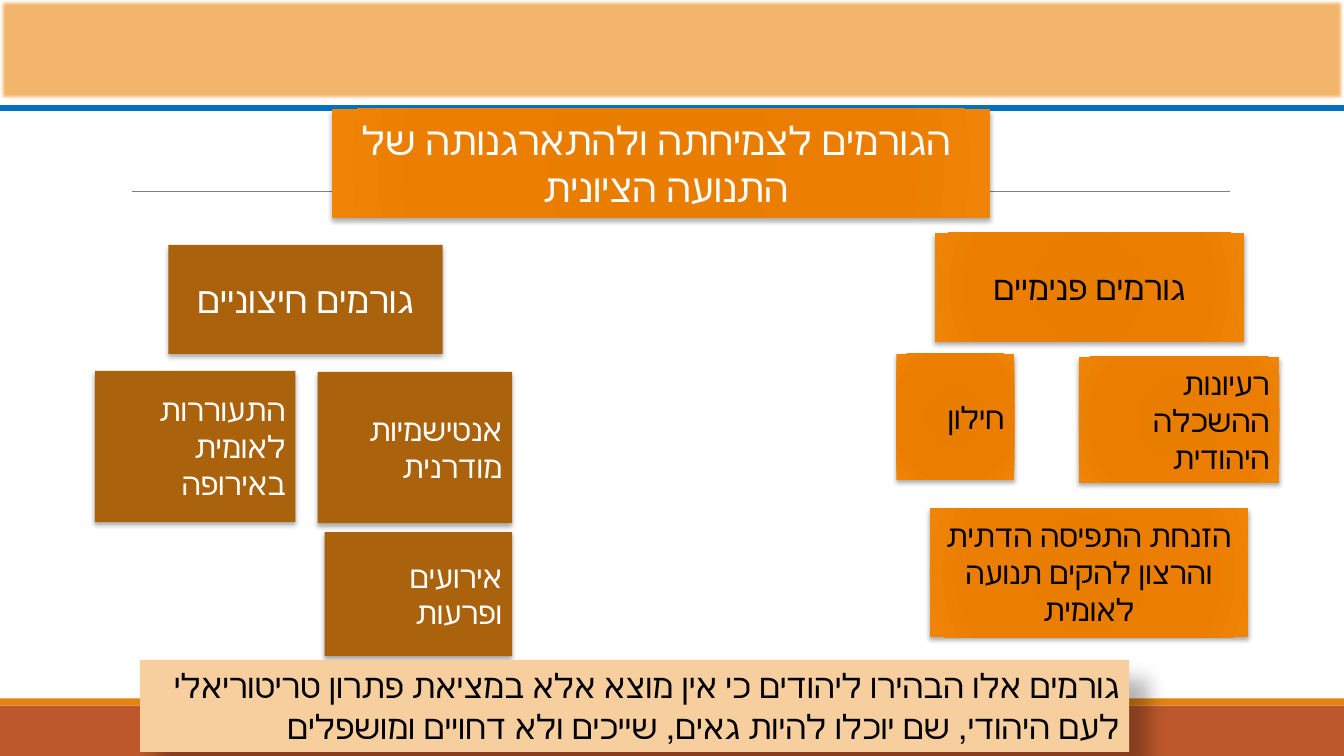
from dataclasses import dataclass
from typing import Optional

from lxml.etree import SubElement
from pptx import Presentation
from pptx.dml.color import RGBColor
from pptx.enum.shapes import MSO_CONNECTOR, MSO_SHAPE
from pptx.enum.text import MSO_ANCHOR, MSO_AUTO_SIZE, PP_ALIGN
from pptx.oxml import parse_xml
from pptx.oxml.ns import nsdecls, qn
from pptx.shapes.autoshape import Shape
from pptx.util import Emu, Pt

PX = 9144
POINT = 12700
BLACK, WHITE = "000000", "FFFFFF"
BROWN = "AB620D"
GLOW = ((0, "E57B00"), (34, "E87D00"), (70, "EB7E00"), (100, "EF8407"))


@dataclass(frozen=True)
class Shadow:
    alpha: int
    blur: float
    distance: float
    angle: int


CARD_SHADOW = Shadow(32, 3.5, 2.2, 90)
SUMMARY_SHADOW = Shadow(30, 15, 18, 45)


@dataclass(frozen=True)
class Band:
    top: int
    height: int
    color: str
    soft_edge: float = 0


@dataclass(frozen=True)
class Rule:
    left: int
    right: int
    y: int
    color: str
    weight: float


@dataclass(frozen=True)
class Card:
    text: str
    left: int
    top: int
    width: int
    height: int
    size: int = 22
    color: str = BLACK
    fill: Optional[str] = None
    align: PP_ALIGN = PP_ALIGN.RIGHT
    anchor: MSO_ANCHOR = MSO_ANCHOR.MIDDLE
    auto_size: MSO_AUTO_SIZE = MSO_AUTO_SIZE.NONE
    shadow: Shadow = CARD_SHADOW


BANDS = (
    Band(700, 50, "BD582C"),
    Band(693, 7, "E48312"),
    Band(0, 99, "F3B56C", 2.5),
)
RULES = (
    Rule(131, 1220, 190, "808080", 0.5),
    Rule(0, 1333, 107, "0070C0", 4.5),
)
INTERNAL_FACTORS = (
    Card("גורמים פנימיים", 927, 231, 307, 108, 24, align=PP_ALIGN.CENTER),
    Card("רעיונות ההשכלה היהודית", 1070, 354, 199, 125),
    Card("הזנחת התפיסה הדתית והרצון להקים תנועה לאומית",
         922, 504, 316, 128, align=PP_ALIGN.CENTER),
    Card("חילון", 889, 351, 117, 125),
)
EXTERNAL_FACTORS = (
    Card("גורמים חיצוניים", 167, 243, 272, 108, 26, WHITE, BROWN, PP_ALIGN.CENTER),
    Card("אנטישמיות מודרנית", 315, 369, 193, 150, 22, WHITE, BROWN),
    Card("התעוררות לאומית באירופה", 94, 368, 199, 150, 22, WHITE, BROWN),
    Card("אירועים ופרעות", 322, 528, 186, 123, 22, WHITE, BROWN),
)
SUMMARY = Card(
    "גורמים אלו הבהירו ליהודים כי אין מוצא אלא במציאת פתרון טריטוריאלי "
    "לעם היהודי, שם יוכלו להיות גאים, שייכים ולא דחויים ומושפלים",
    139, 655, 981, 91, 24, fill="F7CE9D", anchor=MSO_ANCHOR.TOP,
    auto_size=MSO_AUTO_SIZE.SHAPE_TO_FIT_TEXT, shadow=SUMMARY_SHADOW,
)
TITLE = Card(" הגורמים לצמיחתה ולהתארגנותה של התנועה הציונית ",
             329, 108, 653, 108, 28, WHITE, align=PP_ALIGN.CENTER)


def px(length: int) -> Emu:
    return Emu(length * PX)


def rgb(color: str) -> RGBColor:
    return RGBColor.from_string(color)


def apply_format(target: object, values: dict) -> None:
    for name, value in values.items():
        setattr(target, name, value)


def add_rectangle(shapes, left: int, top: int, width: int, height: int,
                  color: Optional[str]) -> Shape:
    rectangle = shapes.add_shape(
        MSO_SHAPE.RECTANGLE, px(left), px(top), px(width), px(height))
    rectangle.shadow.inherit = False
    rectangle.line.fill.background()
    if color:
        rectangle.fill.solid()
        rectangle.fill.fore_color.rgb = rgb(color)
    else:
        fill_with_glow(rectangle)
    return rectangle


def fill_with_glow(rectangle: Shape) -> None:
    rectangle.fill.background()
    properties = rectangle.element.spPr
    stops = "".join(
        f'<a:gs pos="{position * 1000}"><a:srgbClr val="{color}"/></a:gs>'
        for position, color in GLOW)
    edges = " ".join(f'{side}="100000"' for side in "ltrb")
    gradient = parse_xml(
        f'<a:gradFill {nsdecls("a")} rotWithShape="1"><a:gsLst>{stops}</a:gsLst>'
        f'<a:path path="circle"><a:fillToRect {edges}/></a:path></a:gradFill>')
    properties.replace(properties.find(qn("a:noFill")), gradient)


def add_shadow(rectangle: Shape, shadow: Shadow) -> None:
    effects = rectangle.element.spPr.find(qn("a:effectLst"))
    outer = SubElement(
        effects, qn("a:outerShdw"), blurRad=str(round(shadow.blur * POINT)),
        dist=str(round(shadow.distance * POINT)), dir=str(shadow.angle * 60000),
        algn="ctr", rotWithShape="0")
    tint = SubElement(outer, qn("a:srgbClr"), val=BLACK)
    SubElement(tint, qn("a:alpha"), val=str(shadow.alpha * 1000))


def draw_band(shapes, band: Band) -> None:
    strip = add_rectangle(shapes, 0, band.top, 1333, band.height, band.color)
    if band.soft_edge:
        effects = strip.element.spPr.find(qn("a:effectLst"))
        SubElement(effects, qn("a:softEdge"), rad=str(round(band.soft_edge * POINT)))


def draw_rule(shapes, rule: Rule) -> None:
    line = shapes.add_connector(
        MSO_CONNECTOR.STRAIGHT, px(rule.left), px(rule.y), px(rule.right), px(rule.y))
    line.line.color.rgb = rgb(rule.color)
    line.line.width = Pt(rule.weight)
    SubElement(line.element.spPr, qn("a:effectLst"))


def draw_card(shapes, card: Card) -> None:
    box = add_rectangle(
        shapes, card.left, card.top, card.width, card.height, card.fill)
    add_shadow(box, card.shadow)
    frame = box.text_frame
    apply_format(frame, {"word_wrap": True, "vertical_anchor": card.anchor,
                         "auto_size": card.auto_size})
    paragraph = frame.paragraphs[0]
    paragraph.alignment = card.align
    paragraph._p.get_or_add_pPr().set("rtl", "1")
    run = paragraph.add_run()
    run.text = card.text
    apply_format(run.font, {"name": "Calibri", "size": Pt(card.size)})
    run.font.color.rgb = rgb(card.color)
    run.font._element.set("lang", "he-IL")


def main() -> None:
    presentation = Presentation()
    apply_format(presentation, {"slide_width": px(1333), "slide_height": px(750)})
    shapes = presentation.slides.add_slide(presentation.slide_layouts[6]).shapes
    for band in BANDS:
        draw_band(shapes, band)
    for rule in RULES:
        draw_rule(shapes, rule)
    for card in (*INTERNAL_FACTORS, *EXTERNAL_FACTORS, SUMMARY, TITLE):
        draw_card(shapes, card)
    presentation.save("out.pptx")


if __name__ == "__main__":
    main()
